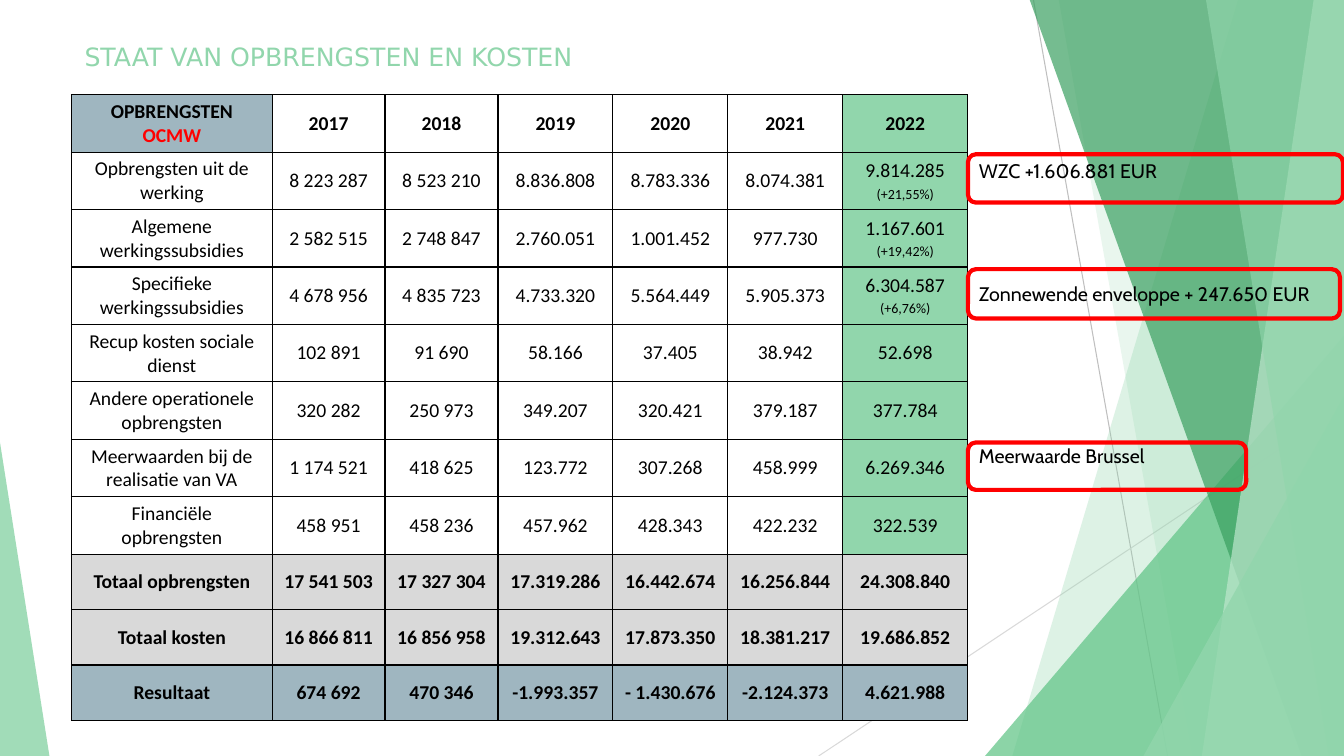
from lxml import etree
from pptx import Presentation
from pptx.dml.color import RGBColor
from pptx.enum.shapes import MSO_CONNECTOR, MSO_SHAPE
from pptx.enum.text import MSO_ANCHOR, PP_ALIGN
from pptx.oxml import parse_xml
from pptx.oxml.ns import qn
from pptx.util import Inches, Pt

STRAIGHT = MSO_CONNECTOR.STRAIGHT
TRIANGLE = MSO_SHAPE.RIGHT_TRIANGLE.ISOSCELES_TRIANGLE
ROUNDED = MSO_SHAPE.ROUNDED_RECTANGLE
CENTER = PP_ALIGN.CENTER
MIDDLE = MSO_ANCHOR.MIDDLE
COLOURS = {
    "mint": "91D6AC", "pale": "BDE6CD", "green": "60C486", "dark": "3BA061",
    "slate": "9FB6C0", "grey": "D9D9D9", "rule": "BFBFBF",
    "black": "000000", "red": "FF0000",
}
WIDTH, HEIGHT = 13.33, 7.5

presentation = Presentation()
presentation.slide_width = Inches(WIDTH)
presentation.slide_height = Inches(HEIGHT)
slide = presentation.slides.add_slide(presentation.slide_layouts[6])
shapes = slide.shapes


def colour(name):
    return RGBColor.from_string(COLOURS[name])


def add_run(paragraph, text, colour_name, **font_values):
    run = paragraph.add_run()
    run.text = text
    run.font.color.rgb = colour(colour_name)
    for attribute, value in font_values.items():
        setattr(run.font, attribute, value)


for x1, y1, x2, y2, line_colour in [
    (10.25, 0, 11.58, HEIGHT, "rule"),
    (WIDTH, 4.03, 8.12, HEIGHT, "grey"),
]:
    connector = shapes.add_connector(STRAIGHT, Inches(x1), Inches(y1), Inches(x2), Inches(y2))
    connector.line.color.rgb = colour(line_colour)
    connector.line.width = Pt(0.75)
    etree.SubElement(connector._element.spPr, qn("a:effectLst"))

facets = [
    ("band", (12.28, 10.04), "mint", 30),
    ("band", (10.5, 11.83), "mint", 20),
    ("triangle", (9.77, 3.33, 3.56, 1), "green", 72),
    ("band", (10.21, 12.91), "dark", 70),
    ("band", (13.03, 11.92), "pale", 70),
    ("band", (11.96, 13.18), "mint", 65),
    ("triangle", (11.34, 3.93, 1.99, 1), "mint", 80),
    ("triangle", (0, 4.39, 0.49, 0), "mint", 85),
]
for kind, geometry, fill_colour, opacity in facets:
    if kind == "band":
        top_x, bottom_x = geometry
        builder = shapes.build_freeform(Inches(top_x), Inches(-0.01))
        corners = [(WIDTH, -0.01), (WIDTH, HEIGHT), (bottom_x, HEIGHT)]
        builder.add_line_segments([(Inches(x), Inches(y)) for x, y in corners], close=True)
        facet = builder.convert_to_shape()
    else:
        left, top, width, apex = geometry
        facet = shapes.add_shape(
            TRIANGLE, Inches(left), Inches(top), Inches(width), Inches(HEIGHT - top))
        facet.adjustments[0] = apex
    facet.shadow.inherit = False
    facet.line.fill.background()
    facet.fill.solid()
    facet.fill.fore_color.rgb = colour(fill_colour)
    fill_element = facet._element.spPr.find(qn("a:solidFill"))[0]
    etree.SubElement(fill_element, qn("a:alpha")).set("val", str(opacity * 1000))

title = shapes.add_textbox(Inches(0.74), Inches(0.36), Inches(9.4), Inches(0.82))
title.text_frame.word_wrap = True
add_run(title.text_frame.paragraphs[0], "STAAT VAN OPBRENGSTEN EN KOSTEN", "mint",
        name="DejaVu Sans", size=Pt(18))

rows = [
    ["OPBRENGSTEN |OCMW", "2017", "2018", "2019", "2020", "2021", "2022"],
    ["Opbrengsten uit de werking", "8 223 287", "8 523 210", "8.836.808",
     "8.783.336", "8.074.381", "9.814.285\n(+21,55%)"],
    ["Algemene werkingssubsidies", "2 582 515", "2 748 847", "2.760.051",
     "1.001.452", "977.730", "1.167.601\n(+19,42%)"],
    ["Specifieke werkingssubsidies", "4 678 956", "4 835 723", "4.733.320",
     "5.564.449", "5.905.373", "6.304.587\n(+6,76%)"],
    ["Recup kosten sociale dienst", "102 891", "91 690", "58.166",
     "37.405", "38.942", "52.698"],
    ["Andere operationele opbrengsten", "320 282", "250 973", "349.207",
     "320.421", "379.187", "377.784"],
    ["Meerwaarden bij de realisatie van VA", "1 174 521", "418 625", "123.772",
     "307.268", "458.999", "6.269.346"],
    ["Financiële opbrengsten", "458 951", "458 236", "457.962",
     "428.343", "422.232", "322.539"],
    ["Totaal opbrengsten", "17 541 503", "17 327 304", "17.319.286",
     "16.442.674", "16.256.844", "24.308.840"],
    ["Totaal kosten", "16 866 811", "16 856 958", "19.312.643",
     "17.873.350", "18.381.217", "19.686.852"],
    ["Resultaat", "674 692", "470 346", "-1.993.357",
     "- 1.430.676", "-2.124.373", "4.621.988"],
]
column_widths = [1.99, 1.12, 1.12, 1.14, 1.14, 1.14, 1.24]
summary_fills = {8: "grey", 9: "grey", 10: "slate"}
last_column = len(column_widths) - 1

table = shapes.add_table(len(rows), len(column_widths), Inches(0.71), Inches(0.94),
                         Inches(sum(column_widths)), Inches(6.2)).table
table.first_row = False
table.horz_banding = False
for column, width in zip(table.columns, column_widths):
    column.width = Inches(width)

for row_index, values in enumerate(rows):
    table.rows[row_index].height = Inches(0.55 if row_index in summary_fills else 0.57)
    bold = row_index == 0 or row_index in summary_fills
    for column_index, value in enumerate(values):
        cell = table.cell(row_index, column_index)
        cell.vertical_anchor = MIDDLE
        fill_name = summary_fills.get(row_index)
        if fill_name is None and column_index == last_column:
            fill_name = "mint"
        if row_index == column_index == 0:
            fill_name = "slate"

        for line_index, text in enumerate(value.split("\n")):
            frame = cell.text_frame
            paragraph = frame.add_paragraph() if line_index else frame.paragraphs[0]
            paragraph.alignment = CENTER
            if line_index:
                paragraph.space_before = Pt(2)
            for part, text_colour in zip(text.split("|"), ["black", "red"]):
                add_run(paragraph, part, text_colour, name="Calibri",
                        size=Pt(10 if line_index else 14), bold=bold)

        properties = cell._tc.get_or_add_tcPr()
        for side in ["lnL", "lnR", "lnT", "lnB"]:
            properties.append(parse_xml(
                f'<a:{side} xmlns:a="http://schemas.openxmlformats.org/drawingml/2006/main" '
                f'w="{Pt(1)}"><a:solidFill><a:srgbClr val="{COLOURS["black"]}"/>'
                f'</a:solidFill></a:{side}>'))
        if fill_name:
            cell.fill.solid()
            cell.fill.fore_color.rgb = colour(fill_name)
        else:
            cell.fill.background()

callouts = [
    ("WZC +1.606.881 EUR", 1.53, 3.72, 0.48, 1.53, 3.61),
    ("Zonnewende enveloppe + 247.650 EUR", 2.67, 3.69, 0.49, 2.75, 3.72),
    ("Meerwaarde Brussel", 4.39, 2.76, 0.47, 4.35, 2.57),
]
for text, frame_top, frame_width, frame_height, text_top, text_width in callouts:
    frame = shapes.add_shape(ROUNDED, Inches(9.6), Inches(frame_top),
                             Inches(frame_width), Inches(frame_height))
    frame.shadow.inherit = False
    frame.fill.background()
    frame.line.color.rgb = colour("red")
    frame.line.width = Pt(3)
    label = shapes.add_textbox(Inches(9.61), Inches(text_top), Inches(text_width), Inches(0.34))
    label.text_frame.word_wrap = True
    add_run(label.text_frame.paragraphs[0], text, "black", name="Cabin", size=Pt(14))

presentation.save("out.pptx")
